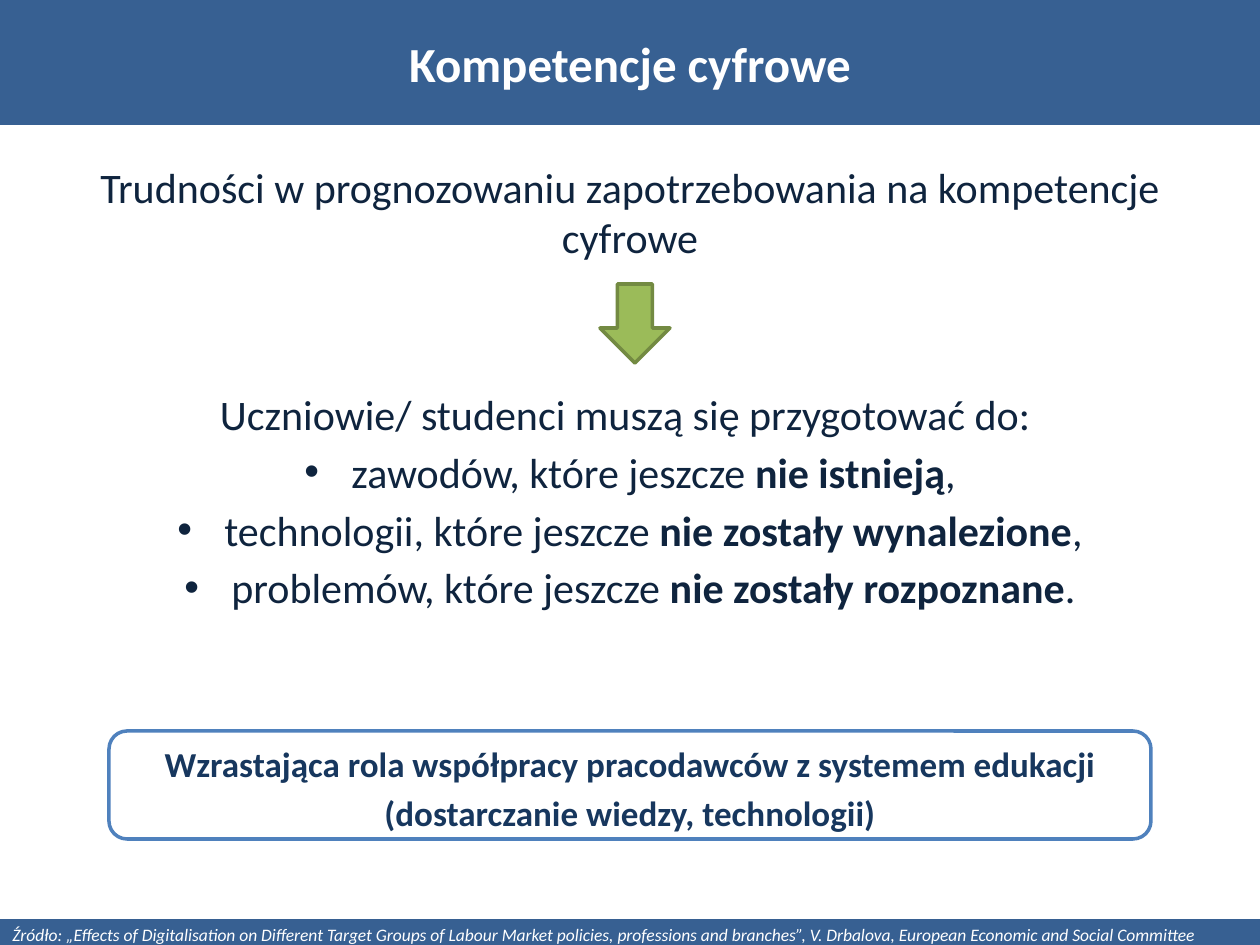
from lxml.etree import SubElement
from pptx import Presentation
from pptx.dml.color import RGBColor
from pptx.enum.shapes import MSO_SHAPE
from pptx.enum.text import MSO_ANCHOR, MSO_AUTO_SIZE, PP_ALIGN
from pptx.oxml.ns import qn
from pptx.util import Emu, Pt

SCALE = 914400 / 126
PAGE_WIDTH, PAGE_HEIGHT = 1260, 945
FONT = "Calibri"
BAND_BLUE = RGBColor(0x37, 0x60, 0x92)
WHITE = RGBColor(0xFF, 0xFF, 0xFF)
NAVY = RGBColor(0x0F, 0x24, 0x3E)
DARK_BLUE = RGBColor(0x17, 0x37, 0x5E)
BORDER_BLUE = RGBColor(0x4F, 0x81, 0xBD)
GREEN = RGBColor(0x9B, 0xBB, 0x59)
DARK_GREEN = RGBColor(0x73, 0x8A, 0x42)

INTRO = "Trudności w prognozowaniu zapotrzebowania na kompetencje cyfrowe"
LEAD = "Uczniowie/ studenci muszą się przygotować do: "
CHALLENGES = [
    ("zawodów, które jeszcze ", "nie istnieją", ","),
    ("technologii, które jeszcze ", "nie zostały wynalezione", ","),
    ("problemów, które jeszcze ", "nie zostały rozpoznane", "."),
]
CONCLUSION = [
    "Wzrastająca rola współpracy pracodawców z systemem edukacji",
    "(dostarczanie wiedzy, technologii)",
]
SOURCE = (
    "Źródło: „Effects of Digitalisation on Different Target Groups of Labour Market "
    "policies, professions and branches”, V. Drbalova, European Economic and Social Committee"
)


def px(length):
    return Emu(round(length * SCALE))


def place(shape, box):
    shape.left, shape.top, shape.width, shape.height = map(px, box)


def add_text(para, text, size, color, bold=False, italic=False):
    span = para.add_run()
    span.text = text
    span.font.name = FONT
    span.font.size = Pt(size)
    span.font.color.rgb = color
    span.font.bold = bold
    span.font.italic = italic


def add_paragraph(frame, before=0, align=PP_ALIGN.CENTER):
    first = frame.paragraphs[0]
    para = frame.add_paragraph() if first.runs else first
    para.alignment = align
    para.space_before = Pt(before)
    return para


def set_bullet(para, indent, symbol=None):
    properties = para._p.get_or_add_pPr()
    properties.set("marL", str(px(indent)))
    properties.set("indent", str(-px(indent)))
    if symbol:
        SubElement(properties, qn("a:buFont")).set("typeface", "Arial")
        SubElement(properties, qn("a:buChar")).set("char", symbol)
    else:
        SubElement(properties, qn("a:buNone"))


def add_block(page, kind, box, fill, line=None):
    shape = page.shapes.add_shape(kind, *map(px, box))
    shape.shadow.inherit = False
    shape.fill.solid()
    shape.fill.fore_color.rgb = fill
    if line:
        shape.line.color.rgb = line
        shape.line.width = Pt(2)
    else:
        shape.line.fill.background()
    return shape


def fill_title(page, box):
    title = page.shapes.title
    place(title, box)
    title.fill.solid()
    title.fill.fore_color.rgb = BAND_BLUE
    frame = title.text_frame
    frame.auto_size = MSO_AUTO_SIZE.NONE
    frame.vertical_anchor = MSO_ANCHOR.MIDDLE
    add_text(add_paragraph(frame), "Kompetencje cyfrowe", size=28, color=WHITE, bold=True)


def fill_body(page, box):
    body = page.placeholders[1]
    place(body, box)
    frame = body.text_frame
    frame.auto_size = MSO_AUTO_SIZE.NONE
    for text, before in ((INTRO, 0), (LEAD, 72)):
        para = add_paragraph(frame, before)
        set_bullet(para, 0)
        add_text(para, text, size=24, color=NAVY)
    for plain, strong, ending in CHALLENGES:
        para = add_paragraph(frame, 4.3)
        set_bullet(para, 47, "•")
        for text, bold in ((plain, False), (strong, True), (ending, False)):
            add_text(para, text, size=24, color=NAVY, bold=bold)


def add_source(page, box):
    frame = add_block(page, MSO_SHAPE.RECTANGLE, box, BAND_BLUE).text_frame
    frame.word_wrap = True
    frame.vertical_anchor = MSO_ANCHOR.MIDDLE
    para = add_paragraph(frame, align=PP_ALIGN.LEFT)
    add_text(para, SOURCE, size=10, color=WHITE, italic=True)


def add_conclusion(page, box):
    frame = add_block(page, MSO_SHAPE.ROUNDED_RECTANGLE, box, WHITE, BORDER_BLUE).text_frame
    frame.word_wrap = True
    frame.vertical_anchor = MSO_ANCHOR.TOP
    for text in CONCLUSION:
        add_text(add_paragraph(frame, 4), text, size=20, color=DARK_BLUE, bold=True)


def main():
    deck = Presentation()
    deck.slide_width, deck.slide_height = px(PAGE_WIDTH), px(PAGE_HEIGHT)
    page = deck.slides.add_slide(deck.slide_layouts[1])
    fill_title(page, (0, 0, PAGE_WIDTH, 125))
    fill_body(page, (63, 155, 1134, 515))
    add_source(page, (0, 919, PAGE_WIDTH, 30))
    add_block(page, MSO_SHAPE.DOWN_ARROW, (600, 284, 70, 79), GREEN, DARK_GREEN)
    add_conclusion(page, (109, 731, 1042, 108))
    deck.save("out.pptx")


if __name__ == "__main__":
    main()
